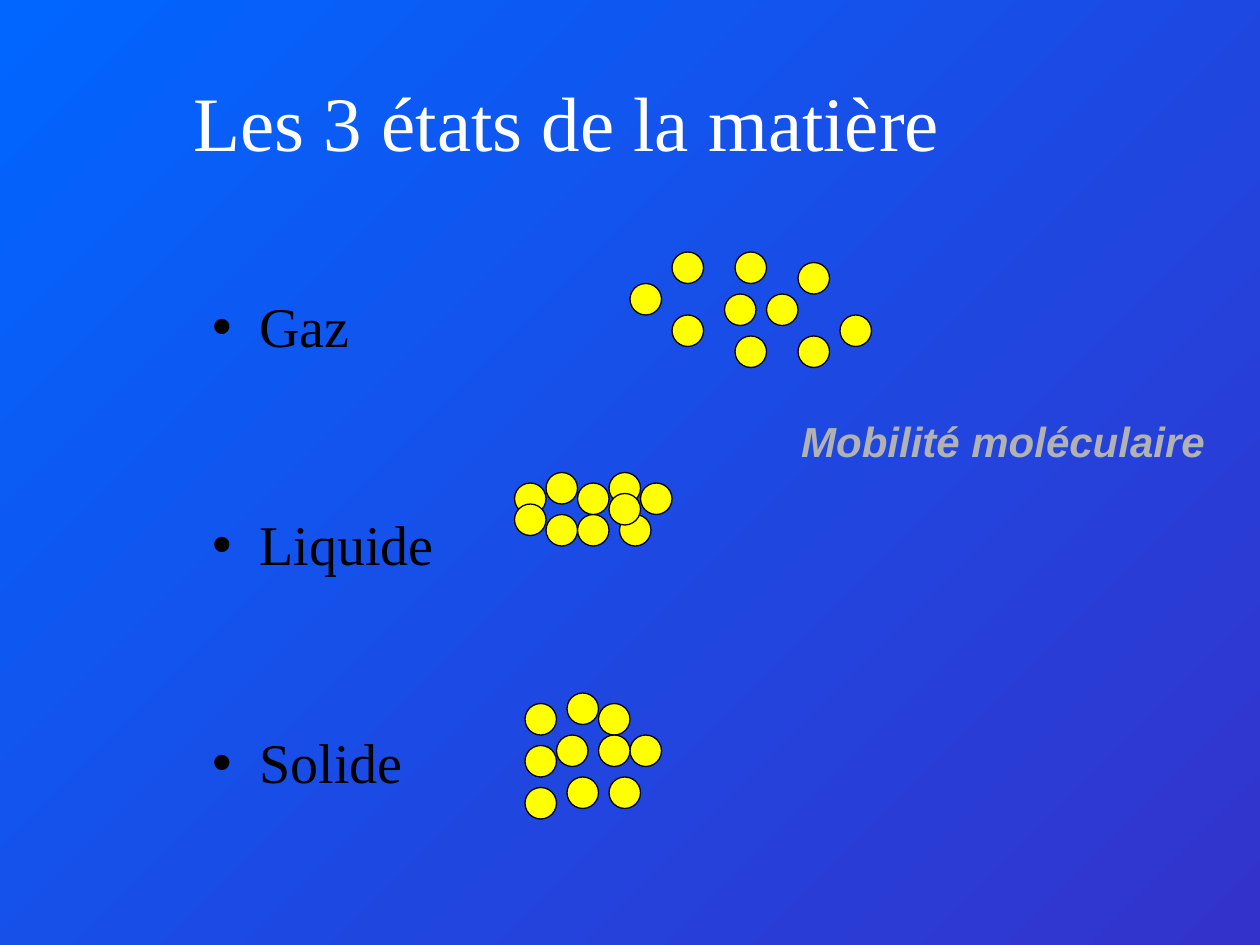
from dataclasses import dataclass
from lxml.etree import SubElement
from pptx import Presentation
from pptx.dml.color import RGBColor as Rgb
from pptx.enum.shapes import MSO_SHAPE as Shape
from pptx.enum.text import MSO_ANCHOR as Anchor, MSO_AUTO_SIZE as AutoSize, PP_ALIGN as Align
from pptx.oxml.ns import qn
from pptx.util import Emu, Pt


@dataclass(frozen=True)
class Theme:
    sky: str = "0066FF"
    indigo: str = "3333CC"
    white: str = "FFFFFF"
    black: str = "000000"
    grey: str = "B2B2B2"
    yellow: str = "FFFF00"
    serif: str = "Times New Roman"
    sans: str = "Arial"
    title_size: int = 44
    list_size: int = 32
    label_size: int = 24
    outline: float = 0.75


THEME = Theme()
STEP = 8
MOLECULE = 3 * STEP
GAS = [(4, 0), (16, 1), (4, 6), (20, 6), (9, 4), (0, 3), (10, 8), (16, 8), (13, 4), (10, 0)]
LIQUID = [(3, 0), (9, 0), (3, 4), (10, 4), (9, 2), (0, 1), (6, 4), (12, 1), (6, 1), (0, 3)]
SOLID = [(0, 1), (7, 1), (0, 5), (10, 4), (3, 4), (0, 9), (4, 8), (8, 8), (7, 4), (4, 0)]


def px(length):
    return Emu(length * 9525)


def place(part, box):
    part.left, part.top, part.width, part.height = map(px, box)


def write(paragraph, text, *, font, size, color, bold=False, italic=False, align=Align.LEFT):
    paragraph.alignment = align
    run = paragraph.add_run()
    run.text = text
    run.font.name = font
    run.font.size = Pt(size)
    run.font.color.rgb = Rgb.from_string(color)
    run.font.bold = bold
    run.font.italic = italic


def paint_background(slide):
    fill = slide.background.fill
    fill.gradient()
    fill.gradient_angle = 315
    for stop, color in zip(fill.gradient_stops, (THEME.sky, THEME.indigo)):
        stop.color.rgb = Rgb.from_string(color)


def fill_title(title, box, text):
    place(title, box)
    frame = title.text_frame
    frame.auto_size = AutoSize.NONE
    frame.vertical_anchor = Anchor.MIDDLE
    write(frame.paragraphs[0], text, font=THEME.serif, size=THEME.title_size,
          color=THEME.white, align=Align.CENTER)


def fill_states(body, box, states):
    place(body, box)
    frame = body.text_frame
    frame.auto_size = AutoSize.NONE
    frame.vertical_anchor = Anchor.TOP
    for index, state in enumerate(states):
        paragraph = frame.add_paragraph() if index else frame.paragraphs[0]
        paragraph.line_spacing = 0.9
        paragraph.space_before = Pt(90 if index else 0)
        properties = paragraph._p.get_or_add_pPr()
        properties.set("marL", str(px(36)))
        properties.set("indent", str(px(-36)))
        SubElement(properties, qn("a:buChar"), char="•")
        write(paragraph, state, font=THEME.serif, size=THEME.list_size, color=THEME.black)


def add_molecules(shapes, left, top, cells):
    for column, row in cells:
        molecule = shapes.add_shape(Shape.OVAL, px(left + column * STEP), px(top + row * STEP),
                                    px(MOLECULE), px(MOLECULE))
        molecule.shadow.inherit = False
        molecule.fill.solid()
        molecule.fill.fore_color.rgb = Rgb.from_string(THEME.yellow)
        molecule.line.color.rgb = Rgb.from_string(THEME.black)
        molecule.line.width = Pt(THEME.outline)


def add_label(shapes, box, text):
    frame = shapes.add_textbox(*map(px, box)).text_frame
    frame.word_wrap = True
    frame.auto_size = AutoSize.SHAPE_TO_FIT_TEXT
    write(frame.paragraphs[0], text, font=THEME.sans, size=THEME.label_size,
          color=THEME.grey, bold=True, italic=True)


def main():
    deck = Presentation()
    deck.slide_width, deck.slide_height = px(960), px(720)
    slide = deck.slides.add_slide(deck.slide_layouts[1])
    shapes = slide.shapes
    paint_background(slide)
    fill_title(shapes.title, (24, 32, 816, 120), "Les 3 états de la matière")
    fill_states(slide.placeholders[1], (152, 223, 207, 393), ("Gaz", "Liquide", "Solide"))
    add_molecules(shapes, 392, 360, LIQUID)
    add_molecules(shapes.add_group_shape().shapes, 400, 528, SOLID)
    add_label(shapes, (601, 312, 359, 48), "Mobilité moléculaire")
    add_molecules(shapes, 480, 192, GAS)
    deck.save("out.pptx")


if __name__ == "__main__":
    main()
